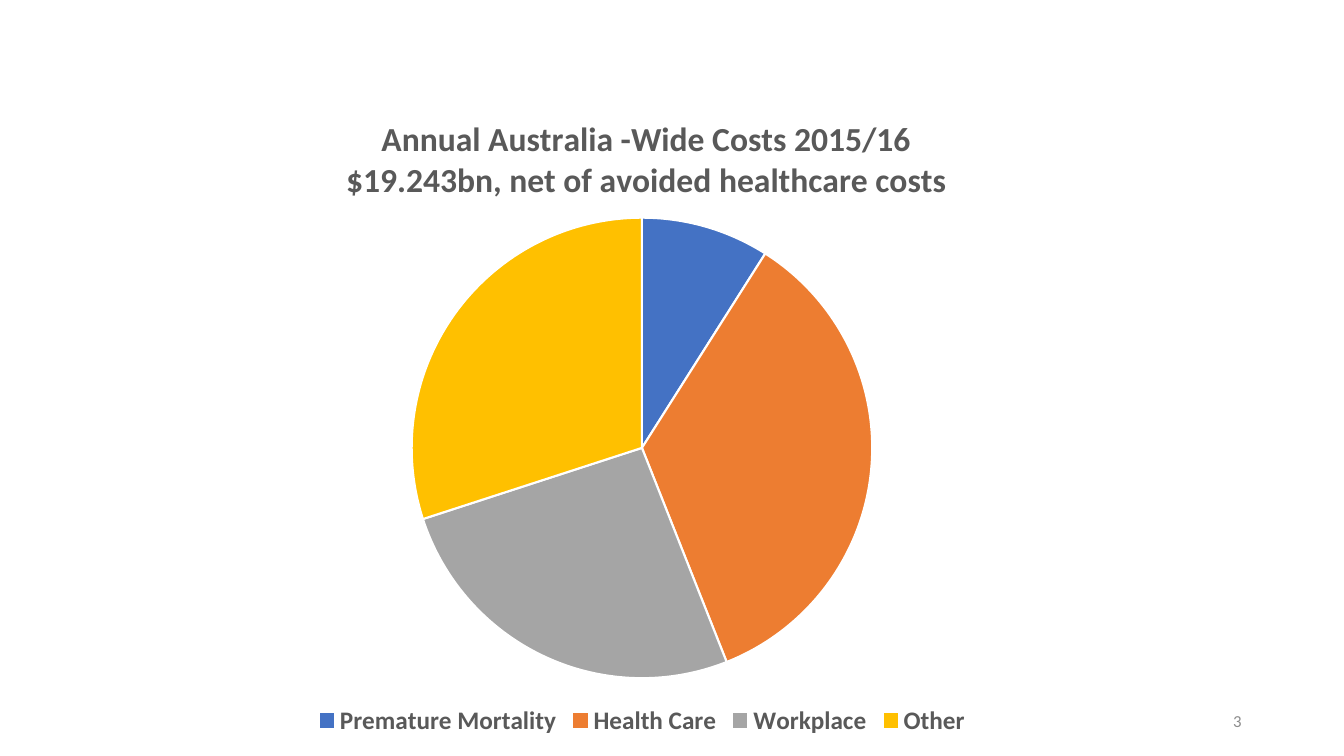
from lxml.etree import SubElement
from pptx import Presentation
from pptx.chart.data import CategoryChartData
from pptx.dml.color import RGBColor
from pptx.enum.chart import XL_CHART_TYPE as ChartType, XL_LEGEND_POSITION as LegendPosition
from pptx.enum.text import MSO_ANCHOR as Anchor, PP_ALIGN as Align
from pptx.oxml.ns import qn
from pptx.util import Pt

TITLE_LINES = [
    "Annual Australia -Wide Costs 2015/16",
    "$19.243bn, net of avoided healthcare costs",
]
COSTS = [
    ("Premature Mortality", 9, "blue"),
    ("Health Care", 35, "orange"),
    ("Workplace", 26, "grey"),
    ("Other", 30, "gold"),
]
PAGE_NUMBER = "3"
FONT = "Calibri"
COLORS = {
    "blue": "4472C4",
    "orange": "ED7D31",
    "grey": "A5A5A5",
    "gold": "FFC000",
    "white": "FFFFFF",
    "text": "595959",
    "page": "8C8C8C",
}

# Lengths in points: left, top, width, height
SLIDE_SIZE = (960, 540)
CHART_BOX = (47.5, 66.2, 822.2, 463)
PAGE_BOX = (678, 500.5, 216, 28.75)
PIE_CENTER = (458.6, 320)
PIE_RADIUS = 164.5
TITLE_CORNER = (245, 82)


def color(name):
    return RGBColor.from_string(COLORS[name])


def style(font, size, color_name, bold=False):
    font.name = FONT
    font.size = Pt(size)
    font.bold = bold
    font.color.rgb = color(color_name)


def place(parent, index, left, top, size=None):
    """Fix a chart part at slide coordinates, as fractions of the chart box."""
    chart_left, chart_top, chart_width, chart_height = CHART_BOX
    settings = [
        ("xMode", "edge"),
        ("yMode", "edge"),
        ("x", (left - chart_left) / chart_width),
        ("y", (top - chart_top) / chart_height),
    ]
    if size:
        settings.insert(0, ("layoutTarget", "inner"))
        settings += [("w", size / chart_width), ("h", size / chart_height)]
    for old in parent.findall(qn("c:layout")):
        parent.remove(old)
    layout = SubElement(parent, qn("c:layout"))
    parent.insert(index, layout)
    manual = SubElement(layout, qn("c:manualLayout"))
    for tag, value in settings:
        text = value if isinstance(value, str) else f"{value:.4f}"
        SubElement(manual, qn(f"c:{tag}")).set("val", text)


def add_cost_pie(slide):
    data = CategoryChartData()
    data.categories = [category for category, _, _ in COSTS]
    data.add_series("Series 1", [share for _, share, _ in COSTS])
    chart = slide.shapes.add_chart(ChartType.PIE, *map(Pt, CHART_BOX), data).chart
    chart.font.name = FONT
    chart.font.size = Pt(10)

    pie = chart.plots[0]
    pie.vary_by_categories = True
    for index, (_, _, color_name) in enumerate(COSTS):
        slice_format = pie.series[0].points[index].format
        slice_format.fill.solid()
        slice_format.fill.fore_color.rgb = color(color_name)
        slice_format.line.color.rgb = color("white")
        slice_format.line.width = Pt(1.5)

    heading = chart.chart_title.text_frame
    for index, line in enumerate(TITLE_LINES):
        paragraph = heading.add_paragraph() if index else heading.paragraphs[0]
        paragraph.text = line
        paragraph.alignment = Align.CENTER
        style(paragraph.font, 24, "text", bold=True)
    chart.chart_title.include_in_layout = False

    chart.has_legend = True
    chart.legend.position = LegendPosition.BOTTOM
    chart.legend.include_in_layout = False
    style(chart.legend.font, 18, "text", bold=True)

    plot_area = chart.element.find(f".//{qn('c:plotArea')}")
    center_x, center_y = PIE_CENTER
    place(plot_area, 0, center_x - PIE_RADIUS, center_y - PIE_RADIUS, 2 * PIE_RADIUS)
    place(chart.element.find(f".//{qn('c:title')}"), 1, *TITLE_CORNER)


def add_page_number(slide):
    frame = slide.shapes.add_textbox(*map(Pt, PAGE_BOX)).text_frame
    frame.word_wrap = True
    frame.vertical_anchor = Anchor.MIDDLE
    paragraph = frame.paragraphs[0]
    paragraph.text = PAGE_NUMBER
    paragraph.alignment = Align.RIGHT
    style(paragraph.font, 12, "page")


def main():
    deck = Presentation()
    deck.slide_width, deck.slide_height = map(Pt, SLIDE_SIZE)
    slide = deck.slides.add_slide(deck.slide_layouts.get_by_name("Blank"))
    add_page_number(slide)
    add_cost_pie(slide)
    deck.save("out.pptx")


if __name__ == "__main__":
    main()
